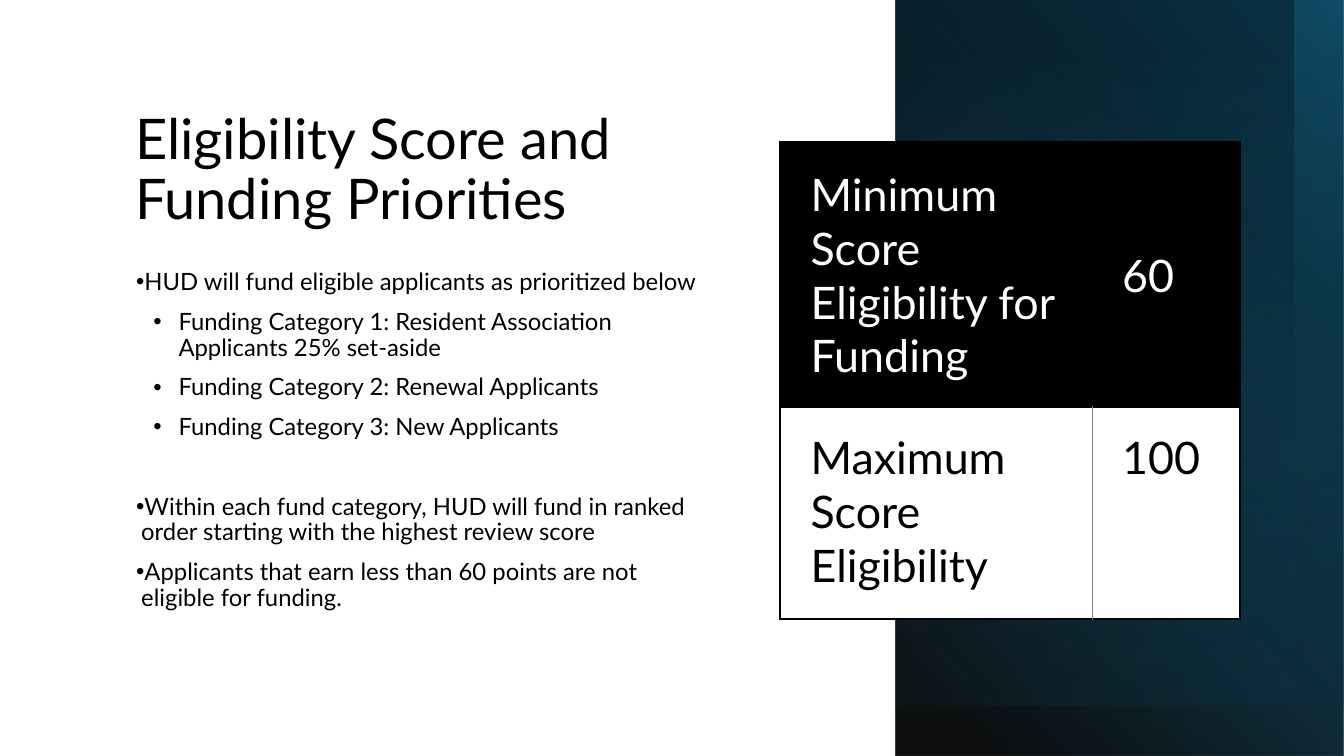
import pptx
import pptx.util
import pptx.dml.color
import pptx.enum.shapes
import pptx.enum.text
import pptx.oxml
import pptx.oxml.ns
import lxml.etree

BLACK = pptx.dml.color.RGBColor(0x00, 0x00, 0x00)
WHITE = pptx.dml.color.RGBColor(0xFF, 0xFF, 0xFF)
GRAY = pptx.dml.color.RGBColor(0x80, 0x80, 0x80)
TEAL = pptx.dml.color.RGBColor(0x15, 0x60, 0x82)
DEEP_TEAL = pptx.dml.color.RGBColor(0x0B, 0x30, 0x41)

ANCHOR = pptx.enum.text.MSO_ANCHOR
NAMESPACE = pptx.oxml.ns.nsdecls("a")

# Body items: text, left margin in inches, space before in points
BODY_ITEMS = [
    ("HUD will fund eligible applicants as prioritized below", 0.05, 10),
    ("Funding Category 1: Resident Association Applicants 25% set-aside", 0.42, 10),
    ("Funding Category 2: Renewal Applicants", 0.42, 10),
    ("Funding Category 3: New Applicants", 0.42, 10),
    ("Within each fund category, HUD will fund in ranked order "
     "starting with the highest review score", 0.05, 38.5),
    ("Applicants that earn less than 60 points are not eligible for funding.", 0.05, 10),
]

# Panel layers: width and height in percent, angle, stops (position, colour, opacity)
PANEL_LEFT = 66.62
PANEL_LAYERS = [
    (33.38, 100, 40, [(8, BLACK, 94), (100, TEAL, 100)]),
    (33.38, 93.33, 300, [(31, DEEP_TEAL, 0), (100, DEEP_TEAL, 26)]),
    (33.38, 93.33, 50, [(0, TEAL, 0), (72, BLACK, 21)]),
    (29.63, 100, 90, [(0, TEAL, 0), (93, BLACK, 29)]),
]

# Score rows: texts, anchor, fill, font colour, inner border colour and width
SCORE_ROWS = [
    (("Minimum Score Eligibility for Funding", "60"), ANCHOR.MIDDLE,
     BLACK, WHITE, (BLACK, 1.5)),
    (("Maximum Score Eligibility", "100"), ANCHOR.TOP,
     WHITE, BLACK, (GRAY, 0.5)),
]


class SlideBuilder:
    """Places elements by percentages of the slide's width and height."""

    font = "Lato"

    def __init__(self, deck):
        self.deck = deck
        self.page = deck.slides.add_slide(deck.slide_layouts[1])

    def across(self, share):
        return round(self.deck.slide_width * share / 100)

    def down(self, share):
        return round(self.deck.slide_height * share / 100)

    def area(self, left, top, width, height):
        return self.across(left), self.down(top), self.across(width), self.down(height)

    def place(self, box, area, anchor):
        box.left, box.top, box.width, box.height = self.area(*area)
        frame = box.text_frame
        frame.word_wrap = True
        frame.auto_size = pptx.enum.text.MSO_AUTO_SIZE.NONE
        frame.vertical_anchor = anchor
        return frame

    def style(self, para, size, color):
        para.alignment = pptx.enum.text.PP_ALIGN.LEFT
        for span in para.runs:
            span.font.name = self.font
            span.font.size = pptx.util.Pt(size)
            span.font.color.rgb = color

    def title(self, text, area):
        frame = self.place(self.page.shapes.title, area, ANCHOR.BOTTOM)
        frame.text = text
        para = frame.paragraphs[0]
        para.line_spacing = 0.9
        self.style(para, 40, BLACK)

    def bullets(self, items, area):
        frame = self.place(self.page.placeholders[1], area, ANCHOR.TOP)
        frame.text = "\n".join(text for text, margin, gap in items)
        for para, (text, margin, gap) in zip(frame.paragraphs, items):
            para.line_spacing = 0.9
            para.space_before = pptx.util.Pt(gap)
            para.space_after = pptx.util.Pt(0)
            self.style(para, 17, BLACK)
            properties = para._p.get_or_add_pPr()
            properties.set("marL", str(pptx.util.Inches(margin)))
            properties.set("indent", str(pptx.util.Inches(-0.25)))
            for markup in (f'<a:buFont {NAMESPACE} typeface="Arial"/>',
                           f'<a:buChar {NAMESPACE} char="•"/>'):
                properties.append(pptx.oxml.parse_xml(markup))

    def gradient_panel(self, area, angle, stops):
        panel = self.page.shapes.add_shape(
            pptx.enum.shapes.MSO_SHAPE.RECTANGLE, *self.area(*area))
        panel.shadow.inherit = False
        panel.line.fill.background()
        panel.rotation = 180
        properties = panel._element.spPr
        properties.xfrm.set("flipH", "1")
        stop_markup = "".join(
            f'<a:gs pos="{position * 1000}"><a:srgbClr val="{color}">'
            f'<a:alpha val="{opacity * 1000}"/></a:srgbClr></a:gs>'
            for position, color, opacity in stops)
        gradient = pptx.oxml.parse_xml(
            f'<a:gradFill {NAMESPACE} rotWithShape="1"><a:gsLst>{stop_markup}</a:gsLst>'
            f'<a:lin ang="{angle * 60000}" scaled="0"/></a:gradFill>')
        properties.find(pptx.oxml.ns.qn("a:prstGeom")).addnext(gradient)

    def borders(self, cell, sides):
        properties = cell._tc.get_or_add_tcPr()
        for side, (color, width) in zip("LRTB", sides):
            line = lxml.etree.SubElement(properties, pptx.oxml.ns.qn(f"a:ln{side}"),
                                         w=str(pptx.util.Pt(width)))
            fill = lxml.etree.SubElement(line, pptx.oxml.ns.qn("a:solidFill"))
            lxml.etree.SubElement(fill, pptx.oxml.ns.qn("a:srgbClr"), val=str(color))

    def score_table(self, rows, left, top, widths, heights):
        area = self.area(left, top, sum(widths), sum(heights))
        table = self.page.shapes.add_table(len(rows), len(widths), *area).table
        for column, width in zip(table.columns, widths):
            column.width = self.across(width)
        for row, height in zip(table.rows, heights):
            row.height = self.down(height)
        outer = (BLACK, 1.5)
        for row, (texts, anchor, fill, color, inner) in zip(table.rows, rows):
            for index, (cell, text) in enumerate(zip(row.cells, texts)):
                vertical = (outer, inner) if index == 0 else (inner, outer)
                self.borders(cell, (*vertical, outer, outer))
                cell.fill.solid()
                cell.fill.fore_color.rgb = fill
                cell.vertical_anchor = anchor
                cell.margin_left = pptx.util.Inches(0.3)
                cell.margin_top = cell.margin_right = cell.margin_bottom = (
                    pptx.util.Inches(0.23))
                cell.text_frame.text = text
                self.style(cell.text_frame.paragraphs[0], 32, color)


def main():
    deck = pptx.Presentation()
    deck.slide_width = pptx.util.Inches(13.33)
    deck.slide_height = pptx.util.Inches(7.5)
    builder = SlideBuilder(deck)

    # Title and priorities
    builder.title("Eligibility Score and Funding Priorities", (9.3, 7.33, 43.66, 24))
    builder.bullets(BODY_ITEMS, (9.38, 35.07, 43.59, 51.6))

    # Layered panel on the right
    for width, height, angle, stops in PANEL_LAYERS:
        builder.gradient_panel((PANEL_LEFT, 0, width, height), angle, stops)

    # Score limits
    builder.score_table(SCORE_ROWS, 58.06, 18.8, (23.18, 11.03), (35.07, 28))

    deck.save("out.pptx")


if __name__ == "__main__":
    main()
